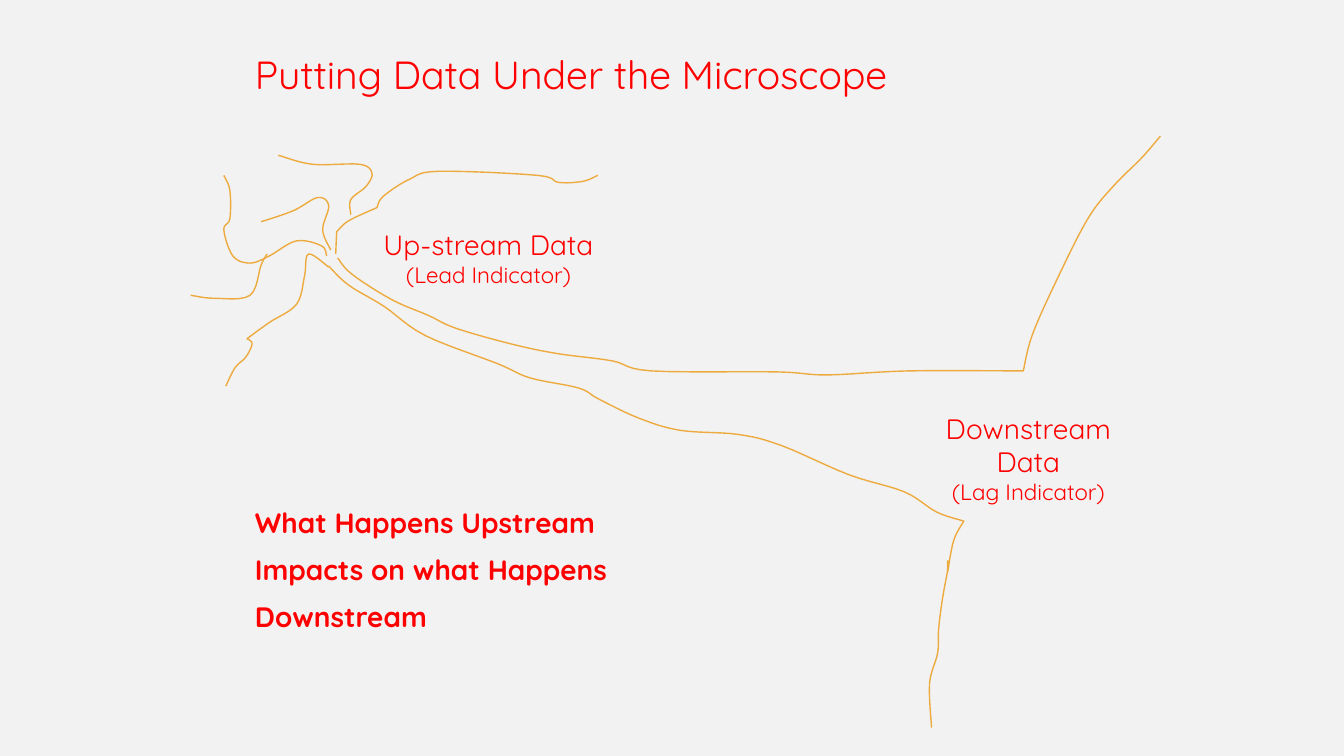
import itertools

import pptx
import pptx.dml.color
import pptx.enum.text
import pptx.util

RED = pptx.dml.color.RGBColor(0xFF, 0x00, 0x00)
STREAM_GOLD = pptx.dml.color.RGBColor(0xED, 0xAB, 0x3F)
PALE_GREY = pptx.dml.color.RGBColor(0xF2, 0xF2, 0xF2)
FONT = "Quicksand"
LEFT = pptx.enum.text.PP_ALIGN.LEFT
CENTER = pptx.enum.text.PP_ALIGN.CENTER

# The grid has 1333 columns and 750 rows of square cells.
COLUMNS, ROWS = 1333, 750
CELL = pptx.util.Inches(0.01)

TITLE_SIZE, HEADING_SIZE, NOTE_SIZE = 28, 20, 16
BODY_LEFT, BODY_COLUMNS = 243, 892
STEPS_PER_BEND = 6

# Each bank turns sharply where the river opens out.
NORTH_CORNER = (1015, 368)
SOUTH_CORNER = (956, 517)

# A stream is a list of reaches. A reach curves smoothly through its bends,
# and a sharp corner is where one reach ends and the next begins.
STREAMS = {
    "north bank": [
        [(335, 256), (349, 272), (388, 297), (425, 313), (453, 326),
         (510, 342), (554, 351), (607, 358), (646, 368), (771, 369),
         (820, 372), (901, 368), NORTH_CORNER],
        [NORTH_CORNER, (1024, 332), (1049, 276), (1079, 217), (1104, 185),
         (1133, 156), (1151, 135)],
    ],
    "south bank": [
        [(326, 264), (346, 283), (381, 304), (422, 333), (494, 361),
         (526, 375), (574, 385), (594, 396), (634, 415), (675, 427),
         (732, 431), (775, 442), (842, 471), (897, 488), (929, 508),
         SOUTH_CORNER],
        [SOUTH_CORNER, (946, 536), (940, 567)],
        [(940, 567), (940, 556)],
    ],
    "river mouth": [
        [(941, 561), (935, 593), (931, 624), (930, 648), (922, 678),
         (924, 722)],
    ],
    "east tributary": [
        [(333, 252), (334, 230)],
        [(334, 230), (346, 219), (374, 206)],
        [(374, 206), (380, 195), (406, 178), (435, 170), (533, 174),
         (554, 181), (578, 180), (593, 174)],
    ],
    "north tributary": [
        [(276, 154), (310, 163), (357, 163), (369, 172), (363, 185),
         (348, 198), (348, 213)],
    ],
    "inner tributary": [
        [(259, 220), (291, 209), (315, 196), (326, 204), (320, 228),
         (328, 248)],
    ],
    "west tributary": [
        [(222, 174), (228, 189), (228, 217), (222, 228), (231, 254),
         (248, 261), (267, 254), (294, 239), (319, 244), (324, 254)],
    ],
    "southwest tributary": [
        [(189, 293), (213, 296), (248, 293), (259, 263), (265, 252)],
    ],
    "south tributary": [
        [(326, 265), (306, 252), (302, 274), (294, 302), (267, 320),
         (245, 336)],
        [(245, 336), (250, 341), (244, 354), (233, 365), (224, 383)],
    ],
}


def curve_through(bends):
    """Return points on a Catmull-Rom spline through the bends."""
    padded = [bends[0], *bends, bends[-1]]
    points = [bends[0]]
    for window in zip(padded, padded[1:], padded[2:], padded[3:]):
        for step in range(1, STEPS_PER_BEND + 1):
            t = step / STEPS_PER_BEND
            points.append(tuple(
                b + t * (c - a) / 2
                + t ** 2 * (2 * a - 5 * b + 4 * c - d) / 2
                + t ** 3 * (3 * b - a - 3 * c + d) / 2
                for a, b, c, d in zip(*window)))
    return points


def write_line(paragraph, text, size=HEADING_SIZE, bold=False, align=LEFT, gap=0):
    paragraph.alignment = align
    paragraph.space_after = pptx.util.Pt(gap)
    run = paragraph.add_run()
    run.text = text
    run.font.name = FONT
    run.font.size = pptx.util.Pt(size)
    run.font.bold = bold
    run.font.color.rgb = RED


class Board:
    """Draws on one slide, with places given in grid columns and rows."""

    def __init__(self, slide):
        self.slide = slide
        background = slide.background.fill
        background.solid()
        background.fore_color.rgb = PALE_GREY

    def text(self, column, row, columns, rows, lines, **style):
        """Each line is its text and size."""
        box = self.slide.shapes.add_textbox(
            *(CELL * length for length in (column, row, columns, rows)))
        frame = box.text_frame
        frame.word_wrap = True
        for index, (words, size) in enumerate(lines):
            paragraph = frame.add_paragraph() if index else frame.paragraphs[0]
            write_line(paragraph, words, size=size, **style)

    def indicator(self, column, row, columns, rows, heading, note):
        lines = [(heading, HEADING_SIZE), (note, NOTE_SIZE)]
        self.text(column, row, columns, rows, lines, align=CENTER)

    def stream(self, reaches):
        course = itertools.chain.from_iterable(map(curve_through, reaches))
        source, *rest = [(x * CELL, y * CELL) for x, y in course]
        builder = self.slide.shapes.build_freeform(*source)
        builder.add_line_segments(rest, close=False)
        water_line = builder.convert_to_shape()
        water_line.shadow.inherit = False
        water_line.fill.background()
        water_line.line.color.rgb = STREAM_GOLD
        water_line.line.width = pptx.util.Pt(1)


def main():
    deck = pptx.Presentation()
    deck.slide_width, deck.slide_height = CELL * COLUMNS, CELL * ROWS
    board = Board(deck.slides.add_slide(deck.slide_layouts[6]))

    board.text(BODY_LEFT, 45, BODY_COLUMNS, 60,
               [("Putting Data Under the Microscope", TITLE_SIZE)])
    takeaway = ["What Happens Upstream", "Impacts on what Happens", "Downstream"]
    board.text(BODY_LEFT, 497, BODY_COLUMNS, 150,
               [(words, HEADING_SIZE) for words in takeaway], bold=True, gap=9.5)
    board.indicator(362, 221, 245, 71, "Up-stream Data", "(Lead Indicator)")
    board.indicator(918, 403, 204, 104, "Downstream Data", "(Lag Indicator)")
    for reaches in STREAMS.values():
        board.stream(reaches)

    deck.save("out.pptx")


if __name__ == "__main__":
    main()
